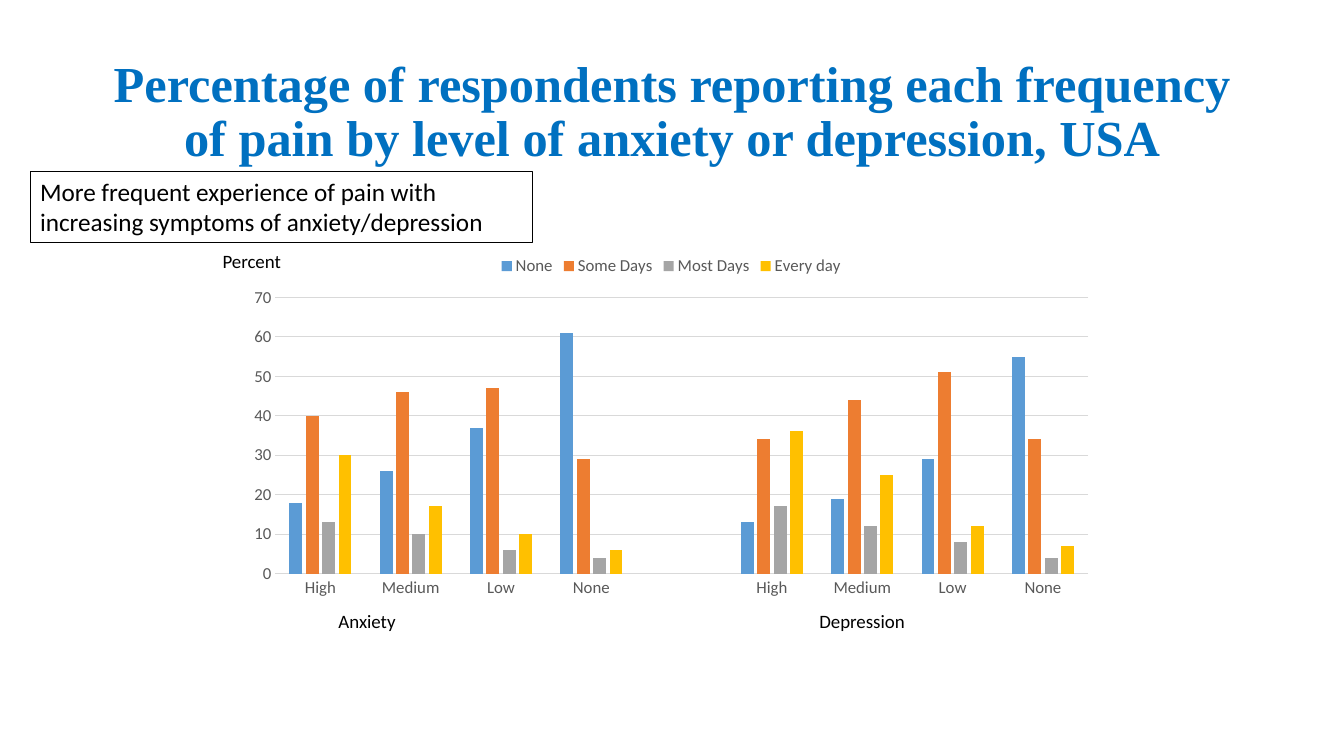
from lxml.etree import SubElement
from pptx import Presentation
from pptx.chart.data import CategoryChartData as ChartData
from pptx.dml.color import RGBColor
from pptx.enum.chart import XL_CHART_TYPE as ChartType
from pptx.enum.chart import XL_LEGEND_POSITION as LegendPosition
from pptx.enum.chart import XL_TICK_MARK as TickMark
from pptx.enum.shapes import MSO_SHAPE as Shape
from pptx.enum.text import MSO_ANCHOR as Anchor
from pptx.enum.text import PP_ALIGN as Align
from pptx.oxml.ns import qn
from pptx.util import Cm, Pt

COLORS = {
    "title": "0070C0", "text": "000000", "paper": "FFFFFF",
    "axis": "595959", "grid": "D9D9D9",
    "None": "5B9BD5", "Some Days": "ED7D31",
    "Most Days": "A5A5A5", "Every day": "FFC000",
}
LEVELS = ["High", "Medium", "Low", "None"]
PAIN = {
    "None": [18, 26, 37, 61, None, 13, 19, 29, 55],
    "Some Days": [40, 46, 47, 29, None, 34, 44, 51, 34],
    "Most Days": [13, 10, 6, 4, None, 17, 12, 8, 4],
    "Every day": [30, 17, 10, 6, None, 36, 25, 12, 7],
}


def color(name):
    """Return the named colour."""
    return RGBColor.from_string(COLORS[name])


def style_font(font, size, name="text", face="Calibri", bold=False):
    """Set size, colour, typeface and weight of a font."""
    font.size, font.name, font.bold = Pt(size), face, bold
    font.color.rgb = color(name)


def write(shape, text, size, name="text", face="Calibri", bold=False,
          align=Align.LEFT, anchor=Anchor.TOP):
    """Fill a shape with one wrapped paragraph and return the paragraph."""
    frame = shape.text_frame
    frame.word_wrap = True
    frame.vertical_anchor = anchor
    para = frame.paragraphs[0]
    para.text = text
    para.alignment = align
    style_font(para.font, size, name, face, bold)
    return para


def add_title(page, left, top, width, height):
    """Place the centred slide title."""
    box = page.shapes.add_textbox(left, top, width, height)
    para = write(box, "Percentage of respondents reporting each frequency of pain "
                 "by level of anxiety or depression, USA", 36, "title",
                 "Times New Roman", True, Align.CENTER, Anchor.MIDDLE)
    para.line_spacing = 0.9


def add_callout(page, left, top, width, height):
    """Place the framed key message."""
    box = page.shapes.add_shape(Shape.RECTANGLE, left, top, width, height)
    box.shadow.inherit = False
    box.fill.solid()
    box.fill.fore_color.rgb = color("paper")
    box.line.color.rgb = color("text")
    box.line.width = Pt(0.75)
    write(box, "More frequent experience of pain with increasing symptoms of "
          "anxiety/depression", 18)


def style_axes(chart):
    """Style both axes and the gridlines."""
    for axis in (chart.category_axis, chart.value_axis):
        axis.major_tick_mark = axis.minor_tick_mark = TickMark.NONE
        style_font(axis.tick_labels.font, 12, "axis")
    values = chart.value_axis
    values.minimum_scale, values.maximum_scale, values.major_unit = 0, 70, 10
    values.format.line.fill.background()
    for line in (chart.category_axis.format.line, values.major_gridlines.format.line):
        line.color.rgb = color("grid")
        line.width = Pt(0.75)


def add_pain_chart(page, left, top, width, height):
    """Place the column chart with its percent and group captions."""
    data = ChartData()
    data.categories = LEVELS + [""] + LEVELS
    for name, shares in PAIN.items():
        data.add_series(name, shares)
    chart = page.shapes.add_chart(ChartType.COLUMN_CLUSTERED, left, top,
                                  width, height, data).chart
    style_font(chart.font, 10)
    chart.has_title = False
    chart.has_legend = True
    chart.legend.position = LegendPosition.TOP
    chart.legend.include_in_layout = False
    style_font(chart.legend.font, 12, "axis")
    style_axes(chart)
    plot = chart.plots[0]
    plot.vary_by_categories = False
    plot.gap_width, plot.overlap = 219, -27
    for series in plot.series:
        series.format.fill.solid()
        series.format.fill.fore_color.rgb = color(series.name)
    captions = [("Percent", Cm(-0.61), 0, Cm(3.73)),
                ("Anxiety", Cm(2.31), height, Cm(5.51)),
                ("Depression", Cm(14.43), height, Cm(4.01))]
    for text, across, down, span in captions:
        box = page.shapes.add_textbox(left + across, top + down, span, Cm(0.84))
        write(box, text, 13.5)


def main():
    """Build and save the slide."""
    deck = Presentation()
    deck.slide_width, deck.slide_height = Cm(33.87), Cm(19.05)
    page = deck.slides.add_slide(deck.slide_layouts[6])
    add_title(page, Cm(2.34), Cm(1.02), Cm(29.21), Cm(3.68))
    add_pain_chart(page, Cm(5.97), Cm(6.17), Cm(21.89), Cm(9.07))
    add_callout(page, Cm(0.76), Cm(4.32), Cm(12.65), Cm(1.8))
    deck.save("out.pptx")


if __name__ == "__main__":
    main()
